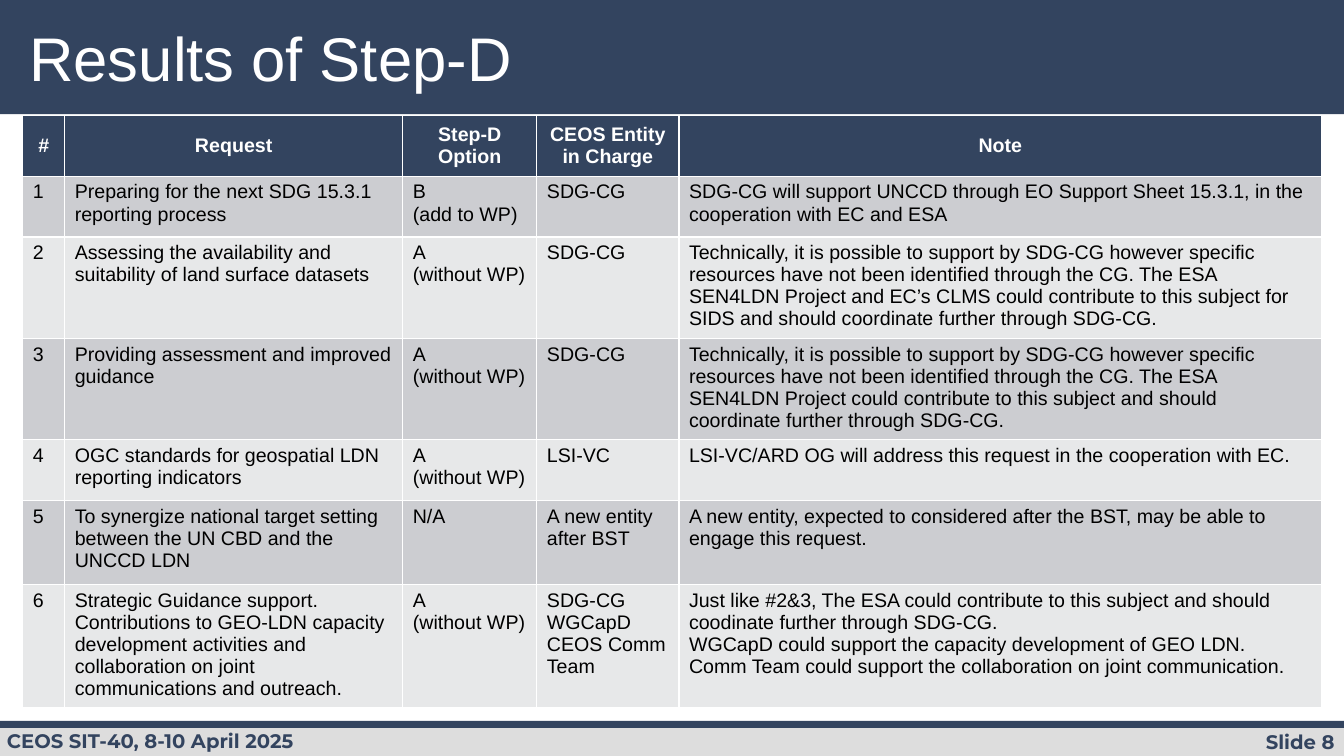
from typing import Any, NamedTuple

from pptx import Presentation
from pptx import util as u
from pptx.dml.color import RGBColor
from pptx.enum import shapes, text

COLOURS = {
    "navy": "33445F", "footer": "DDDDDD", "white": "FFFFFF", "black": "000000",
    "odd row": "CCCDD1", "even row": "E7E8E9",
}


class Bar(NamedTuple):
    top: float
    height: float
    colour: str


class FooterText(NamedTuple):
    left: float
    top: float
    width: float
    words: str
    align: text.PP_ALIGN


class Request(NamedTuple):
    height: float
    request: str
    option: str
    entity: str
    note: str


SLIDE_WIDTH, SLIDE_HEIGHT = 960, 540
BARS = [
    Bar(0, 81.5, "navy"),
    Bar(517.7, 22.3, "footer"),
    Bar(515, 5, "navy"),
]
FOOTER_TEXTS = [
    FooterText(808.5, 517.9, 152, "Slide 8", text.PP_ALIGN.RIGHT),
    FooterText(-2.2, 517, 463, "CEOS SIT-40, 8-10 April 2025", text.PP_ALIGN.LEFT),
]

# A vertical tab is a line break, a newline starts a paragraph
WITHOUT_WP = "A\v(without WP)"
UNIDENTIFIED = (
    "Technically, it is possible to support by SDG-CG however specific resources "
    "have not been identified through the CG. The ESA SEN4LDN Project "
)
COLUMN_WIDTHS = [30, 241.5, 95.8, 101.5, 459.2]
HEADER = Request(43.2, "Request", "Step-D Option", "CEOS Entity in Charge", "Note")
REQUESTS = [
    Request(43.5, "Preparing for the next SDG 15.3.1 reporting process",
            "B\v(add to WP)", "SDG-CG",
            "SDG-CG will support UNCCD through EO Support Sheet 15.3.1, "
            "in the cooperation with EC and ESA"),
    Request(72.4, "Assessing the availability and suitability of land surface datasets",
            WITHOUT_WP, "SDG-CG",
            UNIDENTIFIED + "and EC’s CLMS could contribute to this subject for SIDS "
            "and should coordinate further through SDG-CG."),
    Request(72.4, "Providing assessment and improved guidance",
            WITHOUT_WP, "SDG-CG",
            UNIDENTIFIED + "could contribute to this subject and should "
            "coordinate further through SDG-CG."),
    Request(43.2, "OGC standards for geospatial LDN reporting indicators",
            WITHOUT_WP, "LSI-VC",
            "LSI-VC/ARD OG will address this request in the cooperation with EC."),
    Request(60.5, "To synergize national target setting between the UN CBD "
            "and the UNCCD LDN",
            "N/A", "A new entity after BST",
            "A new entity, expected to considered after the BST, "
            "may be able to engage this request."),
    Request(88, "Strategic Guidance support. Contributions to GEO-LDN capacity "
            "development activities and collaboration on joint communications "
            "and outreach.",
            WITHOUT_WP, "SDG-CG\vWGCapD\vCEOS Comm Team",
            "Just like #2&3, The ESA could contribute to this subject and should "
            "coodinate further through SDG-CG.\n"
            "WGCapD could support the capacity development of GEO LDN.\n"
            "Comm Team could support the collaboration on joint communication."),
]


def rgb(colour: str) -> RGBColor:
    return RGBColor.from_string(COLOURS[colour])


def apply(target: Any, values: dict[str, Any]) -> None:
    for attribute, value in values.items():
        setattr(target, attribute, value)


def format_text(frame: Any, font: dict[str, Any], colour: str,
                paragraph_format: dict[str, Any]) -> None:
    for paragraph in frame.paragraphs:
        apply(paragraph, paragraph_format)
        apply(paragraph.font, font)
        paragraph.font.color.rgb = rgb(colour)


def draw_bar(slide: Any, bar: Bar) -> None:
    band = slide.shapes.add_shape(
        shapes.MSO_SHAPE.RECTANGLE, 0, u.Pt(bar.top), u.Pt(SLIDE_WIDTH), u.Pt(bar.height))
    band.shadow.inherit = False
    band.fill.solid()
    band.fill.fore_color.rgb = rgb(bar.colour)
    band.line.fill.background()


def draw_footer_text(slide: Any, item: FooterText) -> None:
    footer = slide.shapes.add_textbox(
        u.Pt(item.left), u.Pt(item.top), u.Pt(item.width), u.Pt(24.5))
    footer.text_frame.word_wrap = True
    footer.text_frame.text = item.words
    format_text(footer.text_frame,
                {"name": "Montserrat", "size": u.Pt(14), "bold": True},
                "navy", {"alignment": item.align})


def place_title(slide: Any, words: str) -> None:
    title = slide.shapes.title
    apply(title, {"left": u.Pt(13.7), "top": u.Pt(13.7),
                  "width": u.Pt(739.5), "height": u.Pt(61.2)})
    title.text_frame.text = words
    apply(title.text_frame, {"auto_size": text.MSO_AUTO_SIZE.NONE, "word_wrap": True,
                             "vertical_anchor": text.MSO_ANCHOR.MIDDLE})
    format_text(title.text_frame, {"name": "Arial", "size": u.Pt(44)}, "white",
                {"alignment": text.PP_ALIGN.LEFT, "line_spacing": 0.9})
    # Bring the title in front of the band
    slide.shapes._spTree.append(title._element)


def draw_requests(slide: Any) -> None:
    rows = [HEADER, *REQUESTS]
    table = slide.shapes.add_table(
        len(rows), len(COLUMN_WIDTHS), u.Pt(16.2), u.Pt(82.6),
        u.Pt(sum(COLUMN_WIDTHS)), u.Pt(sum(row.height for row in rows))).table
    for column, width in zip(table.columns, COLUMN_WIDTHS):
        column.width = u.Pt(width)
    for number, row in enumerate(rows):
        is_header = number == 0
        fill = "navy" if is_header else "odd row" if number % 2 else "even row"
        table.rows[number].height = u.Pt(row.height)
        entries = ["#" if is_header else str(number), *row[1:]]
        for cell, entry in zip(table.rows[number].cells, entries):
            cell.fill.solid()
            cell.fill.fore_color.rgb = rgb(fill)
            cell.text = entry
            cell.vertical_anchor = (
                text.MSO_ANCHOR.MIDDLE if is_header else text.MSO_ANCHOR.TOP)
            format_text(
                cell.text_frame,
                {"name": "Arial", "size": u.Pt(14), "bold": is_header},
                "white" if is_header else "black",
                {"alignment": text.PP_ALIGN.CENTER if is_header else text.PP_ALIGN.LEFT})


def main() -> None:
    deck = Presentation()
    apply(deck, {"slide_width": u.Pt(SLIDE_WIDTH), "slide_height": u.Pt(SLIDE_HEIGHT)})
    slide = deck.slides.add_slide(deck.slide_layouts[5])

    # Header band and footer
    for bar in BARS:
        draw_bar(slide, bar)
    for item in FOOTER_TEXTS:
        draw_footer_text(slide, item)

    # Title and table of requests
    place_title(slide, "Results of Step-D")
    draw_requests(slide)
    deck.save("out.pptx")


if __name__ == "__main__":
    main()
